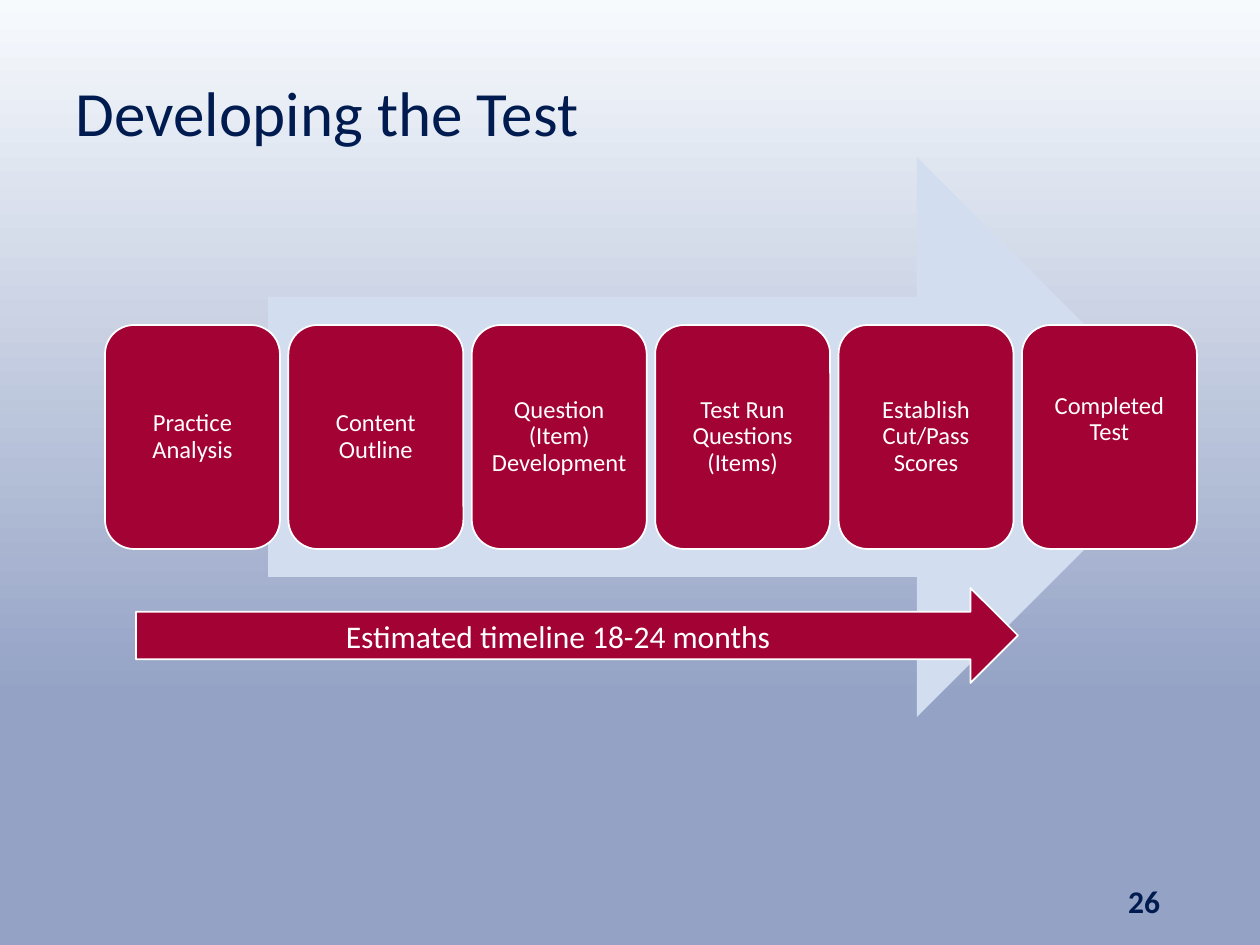
from dataclasses import dataclass

from pptx import Presentation
from pptx.dml.color import RGBColor
from pptx.enum.shapes import MSO_SHAPE
from pptx.enum.text import MSO_ANCHOR, PP_ALIGN
from pptx.util import Pt

EMU_PER_PX = 914400 / 126


@dataclass(frozen=True)
class Theme:
    """Colours, font and type sizes of the deck."""
    font: str = "Calibri"
    navy: str = "001B50"
    crimson: str = "A30234"
    white: str = "FFFFFF"
    pale_blue: str = "D2DEEF"
    sky: str = "F7FAFD"
    dusk: str = "94A2C5"
    title_size: int = 36
    label_size: int = 18
    card_size: int = 14


THEME = Theme()
STEPS = [
    "Practice Analysis",
    "Content Outline",
    "Question (Item) Development",
    "Test Run Questions (Items)",
    "Establish Cut/Pass Scores",
    "Completed Test",
]


def px(length):
    """Turn pixels into EMU."""
    return round(length * EMU_PER_PX)


def rgb(value):
    """Turn a hex string into a colour."""
    return RGBColor.from_string(value)


def write(shape, text, size, color, align, bold=False, insets=(13, 6, 13, 6)):
    """Write one wrapped, vertically centred paragraph and return it."""
    frame = shape.text_frame
    frame.word_wrap = True
    frame.vertical_anchor = MSO_ANCHOR.MIDDLE
    frame.margin_left, frame.margin_top, frame.margin_right, frame.margin_bottom = map(px, insets)
    paragraph = frame.paragraphs[0]
    paragraph.alignment = align
    run = paragraph.add_run()
    run.text = text
    run.font.name = THEME.font
    run.font.size = Pt(size)
    run.font.bold = bold
    run.font.color.rgb = rgb(color)
    return paragraph


def add_block(slide, preset, box, fill, outline=None):
    """Add a flat filled shape with an optional outline."""
    block = slide.shapes.add_shape(preset, *map(px, box))
    block.shadow.inherit = False
    block.fill.solid()
    block.fill.fore_color.rgb = rgb(fill)
    if outline:
        block.line.color.rgb = rgb(outline)
        block.line.width = Pt(1)
    else:
        block.line.fill.background()
    return block


def paint_background(slide):
    """Fill the slide with a vertical gradient."""
    fill = slide.background.fill
    fill.gradient()
    fill.gradient_angle = 270
    for stop, position, color in zip(fill.gradient_stops, (0, 0.74), (THEME.sky, THEME.dusk)):
        stop.position = position
        stop.color.rgb = rgb(color)


def place_title(slide, box, text):
    """Move and format the title placeholder."""
    title = slide.shapes.title
    title.left, title.top, title.width, title.height = map(px, box)
    paragraph = write(title, text, THEME.title_size, THEME.navy, PP_ALIGN.LEFT)
    paragraph.line_spacing = 0.9


def add_process(slide, box, steps):
    """Draw step cards in a row across a large arrow."""
    left, top, width, height = box
    arrow_inset = width * 15 // 100
    add_block(slide, MSO_SHAPE.RIGHT_ARROW,
              (left + arrow_inset, top, width - arrow_inset, height), THEME.pale_blue)
    card_width, card_height = 175, height * 2 // 5
    pitch = (width - card_width) / (len(steps) - 1)
    card_top = top + (height - card_height) / 2
    for index, step in enumerate(steps):
        card = add_block(slide, MSO_SHAPE.ROUNDED_RECTANGLE,
                         (left + index * pitch, card_top, card_width, card_height),
                         THEME.crimson, THEME.white)
        lift = 35 if step == steps[-1] else 0
        paragraph = write(card, step, THEME.card_size, THEME.white, PP_ALIGN.CENTER,
                          insets=(8, 8, 8, 8 + lift))
        paragraph.line_spacing = 0.9


def add_timeline(slide, box, text):
    """Draw the labelled duration arrow."""
    arrow = add_block(slide, MSO_SHAPE.RIGHT_ARROW, box, THEME.crimson, THEME.white)
    write(arrow, text, THEME.label_size, THEME.white, PP_ALIGN.CENTER, insets=(13, 6, 27, 6))


def add_page_number(slide, box, number):
    """Write the page number at the lower right."""
    page = slide.shapes.add_textbox(*map(px, box))
    write(page, number, THEME.label_size, THEME.navy, PP_ALIGN.RIGHT, bold=True)


def main():
    """Build and save the slide."""
    deck = Presentation()
    deck.slide_width, deck.slide_height = px(1260), px(945)
    slide = deck.slides.add_slide(deck.slide_layouts[5])
    paint_background(slide)
    place_title(slide, (63, 38, 1071, 157), "Developing the Test")
    add_process(slide, (105, 157, 1092, 560), STEPS)
    add_timeline(slide, (136, 588, 882, 95), "Estimated timeline 18-24 months")
    add_page_number(slide, (890, 876, 283, 50), "26")
    deck.save("out.pptx")


if __name__ == "__main__":
    main()
